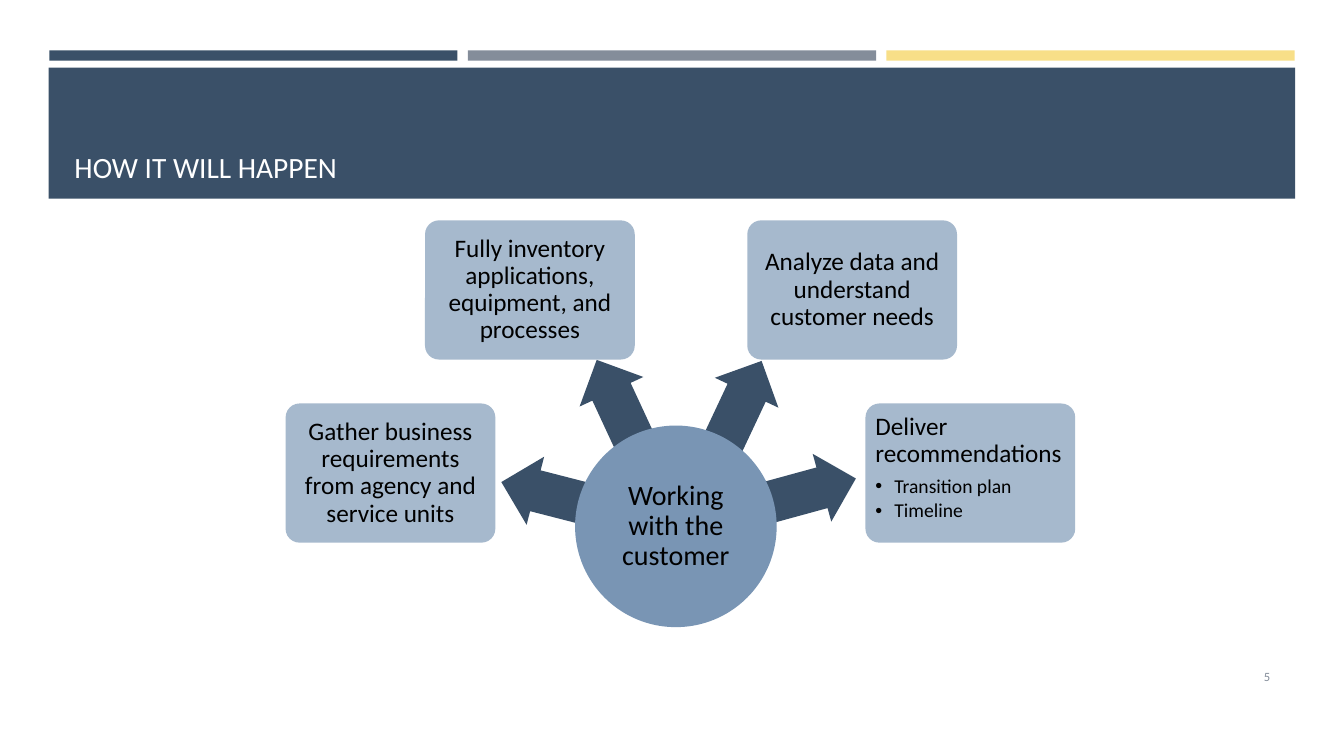
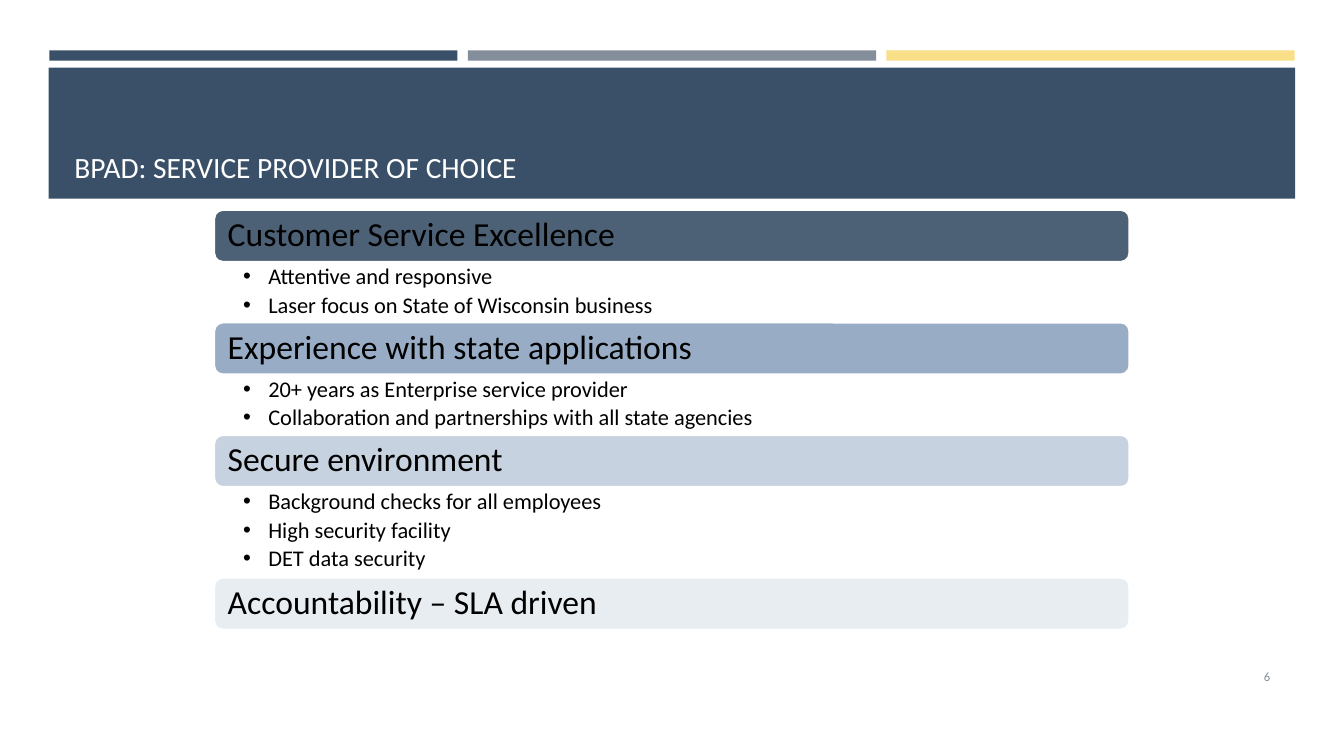
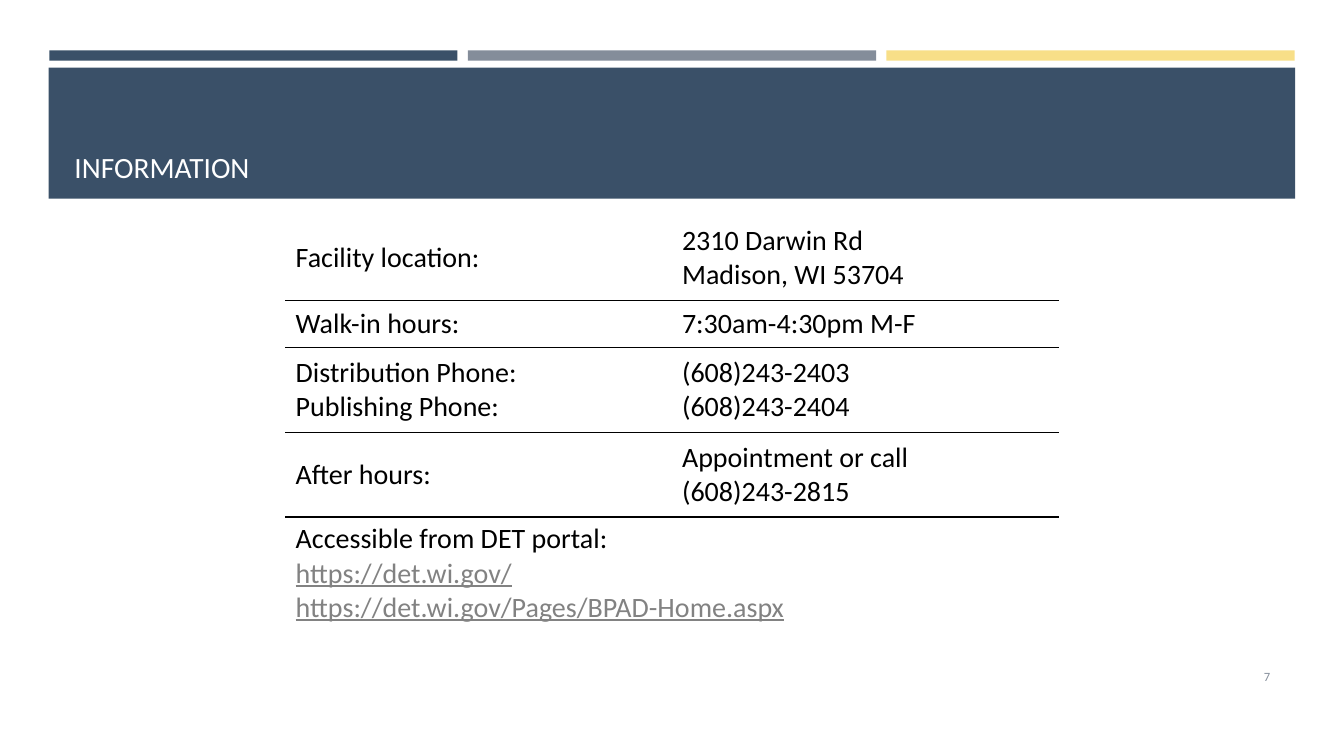
from lxml import etree
from pptx import Presentation
from pptx.dml.color import RGBColor
from pptx.enum.shapes import MSO_SHAPE
from pptx.enum.text import MSO_ANCHOR, MSO_AUTO_SIZE, PP_ALIGN
from pptx.oxml.ns import qn
from pptx.util import Pt

NAVY = RGBColor(0x3A, 0x50, 0x68)
STEEL = RGBColor(0x79, 0x95, 0xB4)
MIST = RGBColor(0xA6, 0xB9, 0xCD)
PALE = RGBColor(0xD2, 0xDC, 0xE6)
SLATE = RGBColor(0x84, 0x8D, 0x9A)
YELLOW = RGBColor(0xF8, 0xDF, 0x88)
LINK_GRAY = RGBColor(0x82, 0x82, 0x82)
BLACK = RGBColor(0, 0, 0)
WHITE = RGBColor(0xFF, 0xFF, 0xFF)

RECT = MSO_SHAPE.RECTANGLE
ROUNDED = MSO_SHAPE.ROUNDED_RECTANGLE
OVAL = MSO_SHAPE.OVAL
LEFT_ARROW = MSO_SHAPE.LEFT_ARROW
LEFT, CENTER, RIGHT = PP_ALIGN.LEFT, PP_ALIGN.CENTER, PP_ALIGN.RIGHT
TOP, MIDDLE, BOTTOM = MSO_ANCHOR.TOP, MSO_ANCHOR.MIDDLE, MSO_ANCHOR.BOTTOM
NO_AUTOFIT = MSO_AUTO_SIZE.NONE
TITLE_ONLY = 5
FONT = "Calibri"


def points(*lengths):
    return [Pt(length) for length in lengths]


class Deck:
    """Shared style plus the slide being built."""

    def __init__(self):
        self.deck = Presentation()
        self.deck.slide_width, self.deck.slide_height = points(960, 540)
        self.page = None

    def new_page(self, title, number):
        self.page = self.deck.slides.add_slide(self.deck.slide_layouts[TITLE_ONLY])
        # Three stripes above the title band
        for index, color in enumerate((NAVY, SLATE, YELLOW)):
            self.shape(RECT, (35.2 + index * 299, 36, 291.6, 7.4), color)
        self.shape(RECT, (34.8, 48.4, 890.4, 93.6), NAVY)
        # Title, brought in front of its band
        holder = self.page.shapes.title
        holder.left, holder.top, holder.width, holder.height = points(46, 55.4, 868, 80)
        holder.element.getparent().append(holder.element)
        self.frame(holder, BOTTOM, (7.2, 3.6))
        self.para(holder, title, 21, WHITE)
        # Page number
        self.text_box((831.6, 468.7, 82.8, 28.8), MIDDLE, (7.2, 3.6),
                      [str(number)], size=9, color=SLATE, align=RIGHT)

    def shape(self, kind, place, color, alpha=None, line=None):
        shape = self.page.shapes.add_shape(kind, *points(*place))
        shape.shadow.inherit = False
        shape.fill.solid()
        shape.fill.fore_color.rgb = color
        if alpha:
            tint = shape.fill._xPr.find(qn("a:solidFill"))[0]
            etree.SubElement(tint, qn("a:alpha")).set("val", str(alpha * 1000))
        if line:
            shape.line.color.rgb = line
            shape.line.width = Pt(1.75)
        else:
            shape.line.fill.background()
        return shape

    def frame(self, box, anchor, insets):
        text = box.text_frame
        text.word_wrap = True
        text.auto_size = NO_AUTOFIT
        text.vertical_anchor = anchor
        text.margin_left = text.margin_right = Pt(insets[0])
        text.margin_top = text.margin_bottom = Pt(insets[1])

    def para(self, box, words, size, color=BLACK, align=LEFT, spacing=None,
             after=0, bullet=None, underline=False):
        text = box.text_frame
        para = text.paragraphs[0]
        if para.runs:
            para = text.add_paragraph()
        para.alignment = align
        if spacing:
            para.line_spacing = spacing
        para.space_before = Pt(0)
        para.space_after = Pt(after)
        if bullet:
            props = para._p.get_or_add_pPr()
            props.set("marL", str(Pt(bullet)))
            props.set("indent", str(-Pt(bullet)))
            etree.SubElement(props, qn("a:buFont")).set("typeface", "Arial")
            etree.SubElement(props, qn("a:buChar")).set("char", "•")
        span = para.add_run()
        span.text = words
        span.font.name = FONT
        span.font.size = Pt(size)
        span.font.color.rgb = color
        if underline:
            span.font.underline = True

    def label(self, shape, words, size, inset, align=CENTER, anchor=MIDDLE):
        self.frame(shape, anchor, (inset, inset))
        self.para(shape, words, size, align=align, spacing=0.9, after=size * 0.35)

    def text_box(self, place, anchor, insets, lines, **style):
        box = self.page.shapes.add_textbox(*points(*place))
        self.frame(box, anchor, insets)
        for line in lines:
            self.para(box, line, **style)

    def arrow(self, left, top, angle):
        arrow = self.shape(LEFT_ARROW, (left, top, 154, 50.2), NAVY)
        arrow.adjustments[0], arrow.adjustments[1] = 0.6, 0.5
        arrow.rotation = angle

    def cell_rule(self, cell, edge):
        props = cell._tc.get_or_add_tcPr()
        rule = etree.Element(qn("a:" + edge), w=str(Pt(1)))
        fill = etree.SubElement(rule, qn("a:solidFill"))
        etree.SubElement(fill, qn("a:srgbClr")).set("val", str(BLACK))
        props.insert(0, rule)

    def table(self, place, heights, rows):
        table = self.page.shapes.add_table(len(rows), 2, *points(*place)).table
        table.first_row = table.horz_banding = False
        last = len(rows) - 1
        for row, height in enumerate(heights):
            table.rows[row].height = Pt(height)
            for column in range(2):
                cell = table.cell(row, column)
                cell.fill.background()
                cell.vertical_anchor = TOP if row == last else MIDDLE
                if row < last:
                    self.cell_rule(cell, "lnB")
                if row > 0:
                    self.cell_rule(cell, "lnT")
            # A row with one entry spans both columns
            if len(rows[row]) == 1:
                table.cell(row, 0).merge(table.cell(row, 1))
            for column, lines in enumerate(rows[row]):
                for line in lines:
                    link = line.startswith("https")
                    self.para(table.cell(row, column), line, 20,
                              LINK_GRAY if link else BLACK, underline=link)


def build_process(deck):
    deck.new_page("HOW IT WILL HAPPEN", 5)
    # Each step: box corner, arrow corner, arrow angle, text, bullets
    steps = [
        ((204, 288.2), (355.7, 338.4), 14.4,
         "Gather business requirements from agency and service units", []),
        ((303.6, 157.4), (381.6, 301.8), 65.1,
         "Fully inventory applications, equipment, and processes", []),
        ((533.8, 157.4), (434.2, 302.4), 115.2,
         "Analyze data and understand customer needs", []),
        ((618.2, 288.2), (460.1, 337), 164.7,
         "Deliver recommendations", ["Transition plan", "Timeline"]),
    ]
    for corner, arrow_corner, angle, words, bullets in steps:
        deck.arrow(*arrow_corner, angle)
        box = deck.shape(ROUNDED, (*corner, 149.8, 99.4), MIST)
        box.adjustments[0] = 0.1
        deck.label(box, words, 18, 4.2, LEFT if bullets else CENTER,
                   TOP if bullets else MIDDLE)
        for bullet in bullets:
            deck.para(box, bullet, 14, spacing=0.9, after=2.1, bullet=13.5)
    # Hub
    hub = deck.shape(OVAL, (410.8, 304, 144, 144), STEEL)
    deck.label(hub, "Working with the customer", 20, 6.3)


def build_strengths(deck):
    deck.new_page("BPAD: SERVICE PROVIDER OF CHOICE", 6)
    strengths = [
        ("Customer Service Excellence", NAVY, 90,
         ["Attentive and responsive", "Laser focus on State of Wisconsin business"]),
        ("Experience with state applications", STEEL, 77,
         ["20+ years as Enterprise service provider",
          "Collaboration and partnerships with all state agencies"]),
        ("Secure environment", MIST, 63,
         ["Background checks for all employees", "High security facility",
          "DET data security"]),
        ("Accountability – SLA driven", PALE, 50, []),
    ]
    left, top, width, bar_height, line_height = 152.9, 149.8, 654, 37.4, 21.5
    for heading, color, alpha, bullets in strengths:
        bar = deck.shape(ROUNDED, (left, top, width, bar_height), color, alpha, WHITE)
        deck.label(bar, heading, 24, 8, LEFT)
        top += bar_height
        if bullets:
            height = line_height * len(bullets)
            deck.text_box((left, top, width, height), TOP, (20.8, 2.2), bullets,
                          size=16, spacing=0.9, after=3.2, bullet=18)
            top += height


def build_contacts(deck):
    deck.new_page("INFORMATION", 7)
    deck.table((204, 154, 552, 302), (60.5, 33.8, 60.5, 60.5, 86.7), [
        (["Facility location:"], ["2310 Darwin Rd", "Madison, WI 53704"]),
        (["Walk-in hours:"], ["7:30am-4:30pm M-F"]),
        (["Distribution Phone:", "Publishing Phone:"],
         ["(608)243-2403", "(608)243-2404"]),
        (["After hours:"], ["Appointment or call", "(608)243-2815"]),
        (["Accessible from DET portal:", "https://det.wi.gov/",
          "https://det.wi.gov/Pages/BPAD-Home.aspx"],),
    ])


def main():
    deck = Deck()
    build_process(deck)
    build_strengths(deck)
    build_contacts(deck)
    deck.deck.save("out.pptx")


if __name__ == "__main__":
    main()
